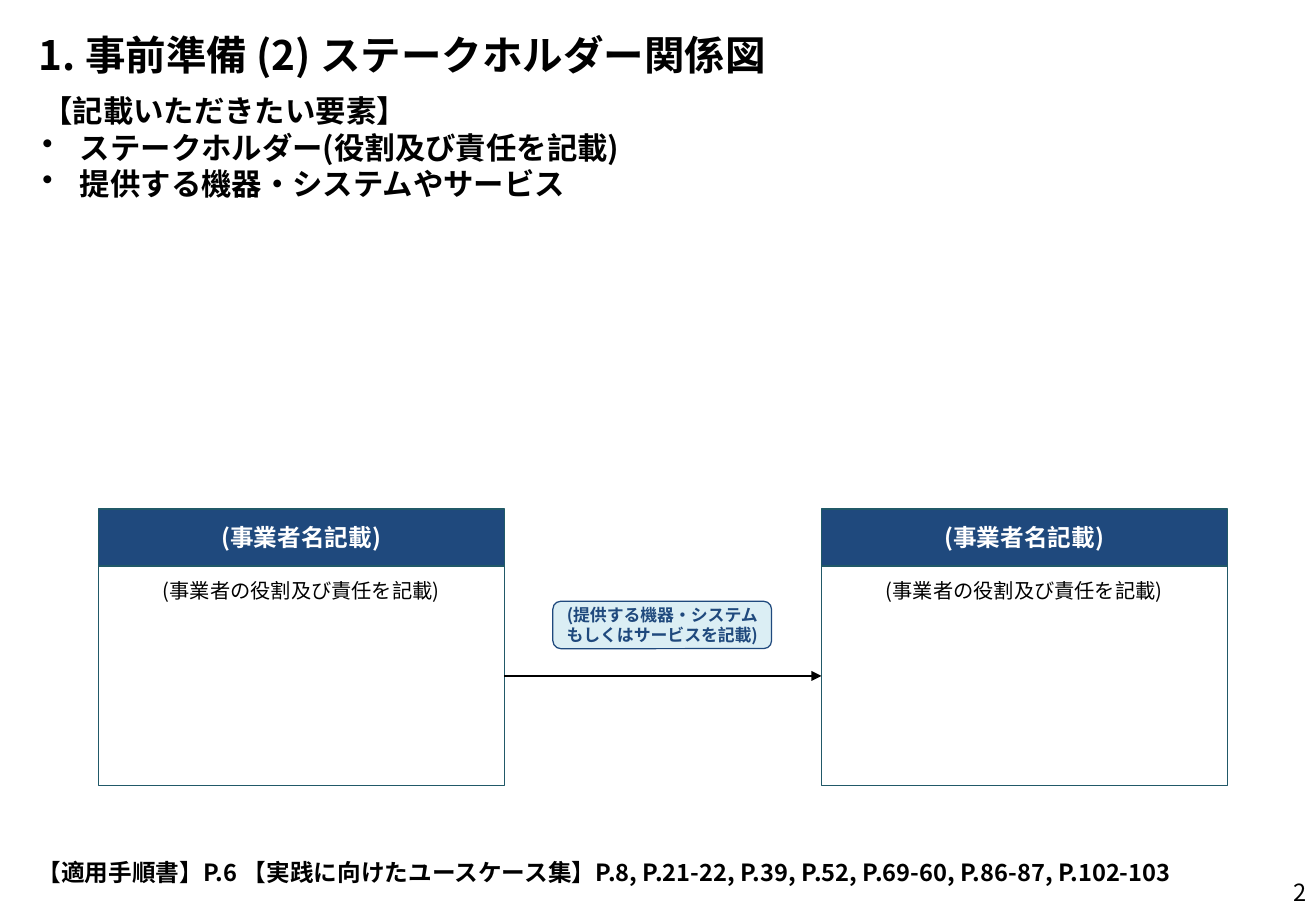
import pptx
import pptx.util
import pptx.dml.color
import pptx.enum.shapes
import pptx.enum.text
import pptx.oxml.ns
import lxml.etree

PIXEL = 9144
FONT_NAME = "Noto Sans CJK JP"
BLACK, WHITE, NAVY, TEAL, PALE = "000000", "FFFFFF", "1F497D", "215968", "DBEEF4"
HEADER_HEIGHT = 47
ALIGN = pptx.enum.text.PP_ALIGN
ANCHOR = pptx.enum.text.MSO_ANCHOR
SHAPES = pptx.enum.shapes.MSO_SHAPE


def px(*lengths):
    return [pptx.util.Emu(length * PIXEL) for length in lengths]


def color(value):
    return pptx.dml.color.RGBColor.from_string(value)


def add_element(parent, tag, **attributes):
    return lxml.etree.SubElement(parent, pptx.oxml.ns.qn(tag), **attributes)


def write(shape, lines, size, bold=False, ink=BLACK, align=ALIGN.LEFT,
          anchor=ANCHOR.TOP, wrap=True, bullets_from=None):
    frame = shape.text_frame
    frame.word_wrap = wrap
    frame.vertical_anchor = anchor
    frame.text = "\n".join(lines)
    for index, paragraph in enumerate(frame.paragraphs):
        paragraph.alignment = align
        if bullets_from is not None and index >= bullets_from:
            properties = paragraph._p.get_or_add_pPr()
            indent = px(31)[0]
            properties.set("marL", str(indent))
            properties.set("indent", str(-indent))
            add_element(properties, "a:buChar", char="•")
        font = paragraph.font
        font.size = pptx.util.Pt(size)
        font.bold = bold
        font.color.rgb = color(ink)
        font.name = FONT_NAME
        add_element(font._element, "a:ea", typeface=FONT_NAME)


def add_text(slide, box, lines, size, **style):
    write(slide.shapes.add_textbox(*px(*box)), lines, size, **style)


def add_panel(slide, kind, box, fill, outline):
    shape = slide.shapes.add_shape(kind, *px(*box))
    shape.shadow.inherit = False
    shape.fill.solid()
    shape.fill.fore_color.rgb = color(fill)
    shape.line.color.rgb = color(outline)
    shape.line.width = pptx.util.Pt(0.75)
    return shape


def add_title(slide, box):
    title = slide.shapes.title
    title.left, title.top, title.width, title.height = px(*box)
    write(title, ["1. 事前準備 (2) ステークホルダー関係図"], 24, bold=True, anchor=ANCHOR.MIDDLE)
    title.text_frame.auto_size = pptx.enum.text.MSO_AUTO_SIZE.SHAPE_TO_FIT_TEXT


def add_stakeholder(slide, box):
    left, top, width, height = box
    body = add_panel(slide, SHAPES.RECTANGLE,
                     (left, top + HEADER_HEIGHT, width, height - HEADER_HEIGHT), WHITE, TEAL)
    write(body, ["(事業者の役割及び責任を記載)"], 12, align=ALIGN.CENTER)
    body.text_frame.margin_top = px(10)[0]
    header = add_panel(slide, SHAPES.RECTANGLE, (left, top, width, HEADER_HEIGHT), NAVY, TEAL)
    write(header, ["(事業者名記載)"], 14, bold=True, ink=WHITE, align=ALIGN.CENTER,
          anchor=ANCHOR.MIDDLE, wrap=False)
    return body


def add_supply_arrow(slide, provider, receiver):
    arrow = slide.shapes.add_connector(pptx.enum.shapes.MSO_CONNECTOR.STRAIGHT, 0, 0, 0, 0)
    arrow.begin_connect(provider, 3)
    arrow.end_connect(receiver, 1)
    arrow.line.color.rgb = color(BLACK)
    arrow.line.width = pptx.util.Pt(0.75)
    add_element(arrow.line._get_or_add_ln(), "a:tailEnd", type="triangle")
    add_element(arrow._element.spPr, "a:effectLst")


def add_relationship(slide, box):
    left, top, width, height = box
    card_width = 334
    provider, receiver = [
        add_stakeholder(slide, (card_left, top, card_width, height))
        for card_left in (left, left + width - card_width)
    ]
    add_supply_arrow(slide, provider, receiver)
    label = add_panel(slide, SHAPES.ROUNDED_RECTANGLE, (left + 374, top + 76, 180, 39), PALE, NAVY)
    write(label, ["(提供する機器・システム", "もしくはサービスを記載)"], 10, bold=True, ink=NAVY,
          align=ALIGN.CENTER, anchor=ANCHOR.MIDDLE, wrap=False)


def main():
    presentation = pptx.Presentation()
    presentation.slide_width, presentation.slide_height = px(1083, 750)
    slide = presentation.slides.add_slide(presentation.slide_layouts[5])
    add_title(slide, (22, 20, 1040, 50))
    add_text(slide, (25, 71, 626, 228),
             ["【記載いただきたい要素】", "ステークホルダー(役割及び責任を記載)",
              "提供する機器・システムやサービス"], 18, bold=True, bullets_from=1)
    add_relationship(slide, (81, 419, 929, 228))
    add_text(slide, (21, 701, 1025, 46),
             ["【適用手順書】P.6 【実践に向けたユースケース集】"
              "P.8, P.21-22, P.39, P.52, P.69-60, P.86-87, P.102-103"], 14, bold=True)
    add_text(slide, (832, 714, 253, 40), ["2"], 14, align=ALIGN.RIGHT, anchor=ANCHOR.MIDDLE)
    presentation.save("out.pptx")


if __name__ == "__main__":
    main()
